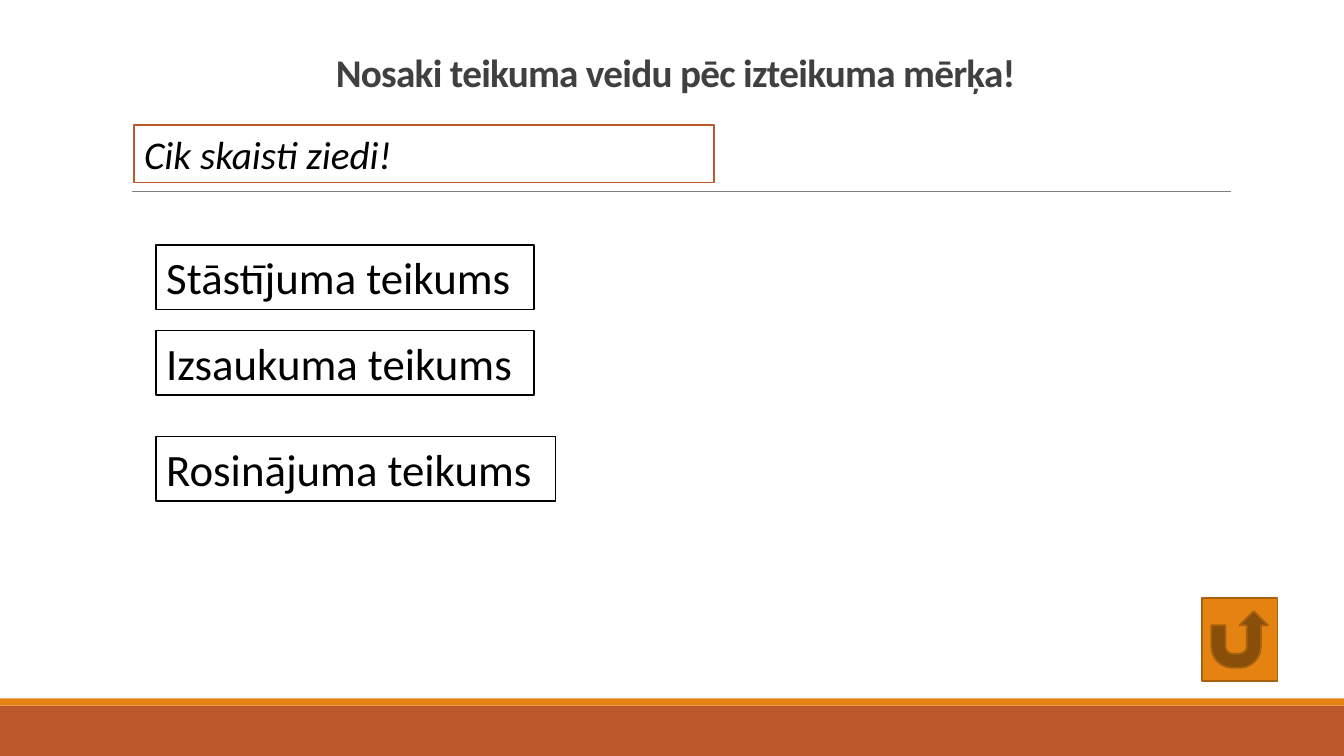
from pptx import Presentation, util as u
from pptx.dml.color import RGBColor
from pptx.enum import shapes, text
from pptx.oxml.ns import qn
from lxml import etree

C = {"rust": "BD582C", "orange": "E48312", "brown": "A9610D", "grey": "808080",
     "title": "404040", "black": "000000", "white": "FFFFFF"}
W, H = 13.33, 7.5

prs = Presentation()
prs.slide_width, prs.slide_height = u.Inches(W), u.Inches(H)
s = prs.slides.add_slide(prs.slide_layouts[6])


def add_box(x, y, w, h, fill, line=None, kind=shapes.MSO_SHAPE.RECTANGLE):
    sp = s.shapes.add_shape(kind, *map(u.Inches, (x, y, w, h)))
    sp.shadow.inherit = False
    sp.fill.solid()
    sp.fill.fore_color.rgb = RGBColor.from_string(C[fill])
    if line:
        sp.line.color.rgb = RGBColor.from_string(C[line])
        sp.line.width = u.Pt(1.25)
    else:
        sp.line.fill.background()
    return sp


def write(sp, words, size, color="black", align=text.PP_ALIGN.LEFT,
          anchor=text.MSO_ANCHOR.TOP):
    """Fill a shape with one wrapped paragraph and return its run."""
    tf = sp.text_frame
    tf.word_wrap = True
    tf.vertical_anchor = anchor
    tf.text = words
    p = tf.paragraphs[0]
    p.alignment = align
    r = p.runs[0]
    r.font.name, r.font.size = "Calibri", u.Pt(size)
    r.font.color.rgb = RGBColor.from_string(C[color])
    return r


# Footer bands and rule
add_box(0, 7, W, 0.5, "rust")
add_box(0, 6.93, W, 0.07, "orange")
rule = s.shapes.add_connector(shapes.MSO_CONNECTOR.STRAIGHT,
                              *map(u.Inches, (1.31, 1.9, 12.21, 1.9)))
rule.line.color.rgb = RGBColor.from_string(C["grey"])
rule.line.width = u.Pt(0.5)
etree.SubElement(rule._element.spPr, qn("a:effectLst"))

# Title
title = s.shapes.add_textbox(*map(u.Inches, (1.2, 0.31, 11, 0.69)))
r = write(title, "Nosaki teikuma veidu pēc izteikuma mērķa!", 28, "title",
          text.PP_ALIGN.CENTER, text.MSO_ANCHOR.BOTTOM)
r.font.bold = True
r._r.get_or_add_rPr().set("spc", "-50")
title.text_frame.paragraphs[0].line_spacing = 0.85

# Example sentence
r = write(add_box(1.33, 1.24, 5.75, 0.57, "white", "rust"), "Cik skaisti ziedi!", 28)
r.font.italic = True

# Answer choices
for words, y, w in (("Stāstījuma teikums", 2.43, 3.75),
                    ("Izsaukuma teikums", 3.28, 3.75),
                    ("Rosinājuma teikums", 4.33, 3.96)):
    write(add_box(1.55, y, w, 0.64, "white", "black"), words, 32)

# Return button
add_box(11.92, 5.93, 0.75, 0.83, "orange", "brown",
        shapes.MSO_SHAPE.ACTION_BUTTON_RETURN)

prs.save("out.pptx")
